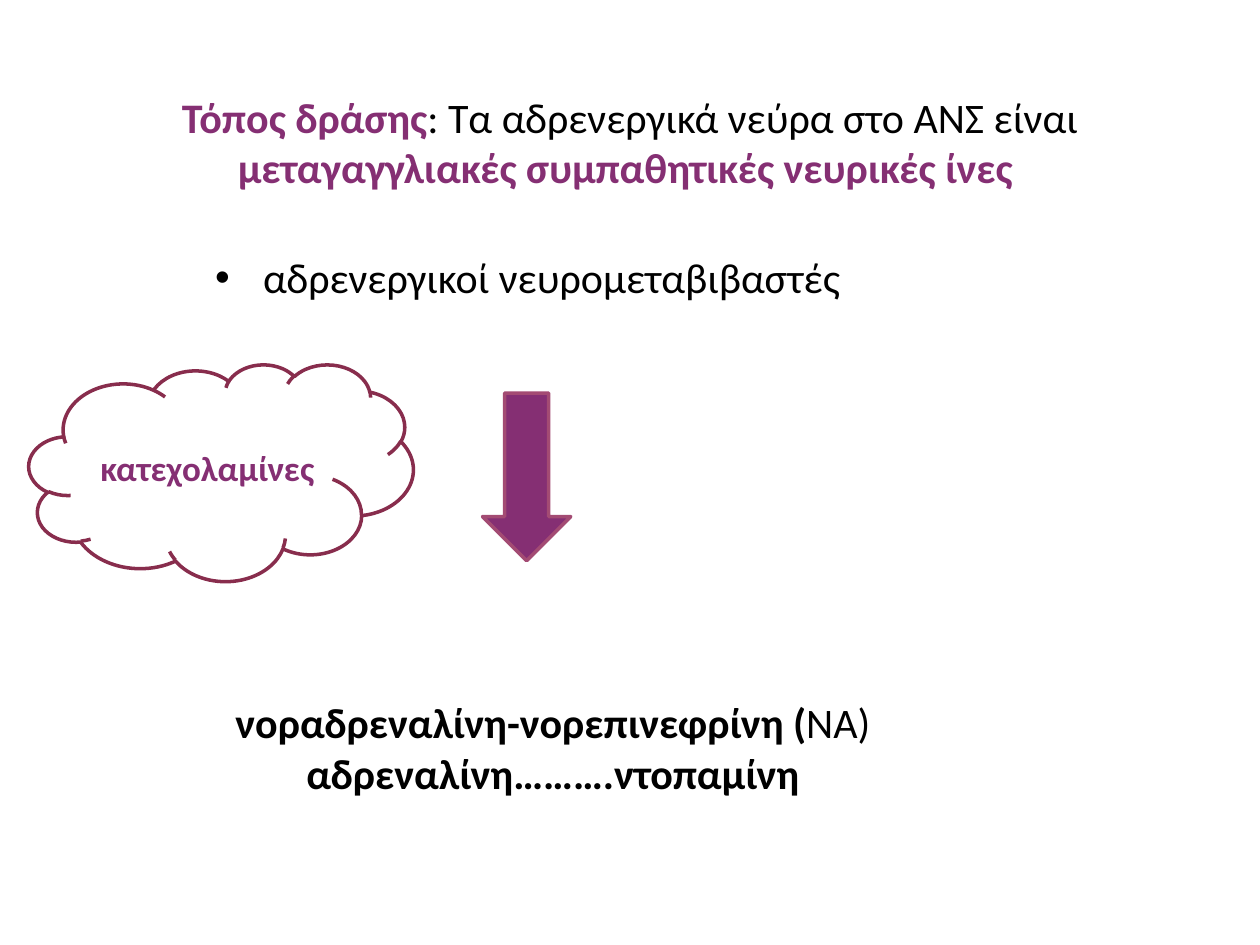
from lxml.etree import SubElement
from pptx import Presentation
from pptx.dml.color import RGBColor
from pptx.enum.shapes import MSO_SHAPE
from pptx.enum.text import MSO_ANCHOR, PP_ALIGN
from pptx.oxml.ns import qn
from pptx.util import Inches, Pt

PLUM = RGBColor(0x85, 0x2F, 0x73)
ROSE = RGBColor(0xA3, 0x4B, 0x73)
WINE = RGBColor(0x88, 0x2D, 0x4D)
BLACK = RGBColor(0, 0, 0)
WHITE = RGBColor(255, 255, 255)


class SlideBuilder:
    font_name = "Calibri"
    line_width = Pt(2)

    def __init__(self, slide):
        self.slide = slide

    def apply(self, target, values):
        for name, value in values.items():
            setattr(target, name, value)

    def fill_text(self, frame, paragraphs, size=24, anchor=MSO_ANCHOR.TOP, wrap=True):
        self.apply(frame, {"word_wrap": wrap, "vertical_anchor": anchor})
        for index, (alignment, runs) in enumerate(paragraphs):
            paragraph = frame.paragraphs[0] if index == 0 else frame.add_paragraph()
            paragraph.alignment = alignment
            for text, color, bold in runs:
                run = paragraph.add_run()
                run.text = text
                self.apply(run.font, {"name": self.font_name, "size": Pt(size), "bold": bold})
                run.font.color.rgb = color

    def text(self, box, paragraphs, **style):
        shape = self.slide.shapes.add_textbox(*map(Inches, box))
        self.fill_text(shape.text_frame, paragraphs, **style)
        return shape

    def bullet(self, box, text):
        shape = self.text(box, [(PP_ALIGN.LEFT, [(text, BLACK, False)])])
        paragraph = shape.text_frame.paragraphs[0]
        paragraph.space_before = Pt(4.8)
        properties = paragraph._p.get_or_add_pPr()
        properties.set("marL", str(Inches(0.38)))
        properties.set("indent", str(Inches(-0.38)))
        SubElement(properties, qn("a:buFont"), typeface="Arial")
        SubElement(properties, qn("a:buChar"), char="•")

    def shape(self, kind, box, fill, line):
        shape = self.slide.shapes.add_shape(kind, *map(Inches, box))
        shape.shadow.inherit = False
        shape.fill.solid()
        shape.fill.fore_color.rgb = fill
        shape.line.color.rgb = line
        shape.line.width = self.line_width
        return shape


def main():
    presentation = Presentation()
    presentation.slide_width = Inches(10)
    presentation.slide_height = Inches(7.5)
    builder = SlideBuilder(presentation.slides.add_slide(presentation.slide_layouts[6]))

    title = [
        ("Τόπος δράσης", PLUM, True),
        (": Τα αδρενεργικά νεύρα στο ΑΝΣ είναι ", BLACK, False),
        ("μεταγαγγλιακές συμπαθητικές νευρικές ίνες ", PLUM, True),
    ]
    builder.text((0.5, 0.3, 9, 1.65), [(PP_ALIGN.CENTER, title)], anchor=MSO_ANCHOR.MIDDLE)
    builder.bullet((1.61, 1.95, 5.44, 2.81), "αδρενεργικοί νευρομεταβιβαστές")
    builder.shape(MSO_SHAPE.DOWN_ARROW, (3.83, 3.12, 0.7, 1.33), PLUM, ROSE)

    transmitters = [
        (PP_ALIGN.LEFT, [("νοραδρεναλίνη-νορεπινεφρίνη (", BLACK, True), ("ΝΑ)", BLACK, False)]),
        (PP_ALIGN.CENTER, [("αδρεναλίνη……….ντοπαμίνη", BLACK, True)]),
    ]
    builder.text((1.77, 5.48, 5.28, 0.91), transmitters, wrap=False)

    cloud = builder.shape(MSO_SHAPE.CLOUD, (0.23, 2.89, 3.05, 1.72), WHITE, WINE)
    label = [(PP_ALIGN.CENTER, [("κατεχολαμίνες", PLUM, True)])]
    builder.fill_text(cloud.text_frame, label, size=20, anchor=MSO_ANCHOR.MIDDLE)

    presentation.save("out.pptx")


if __name__ == "__main__":
    main()
